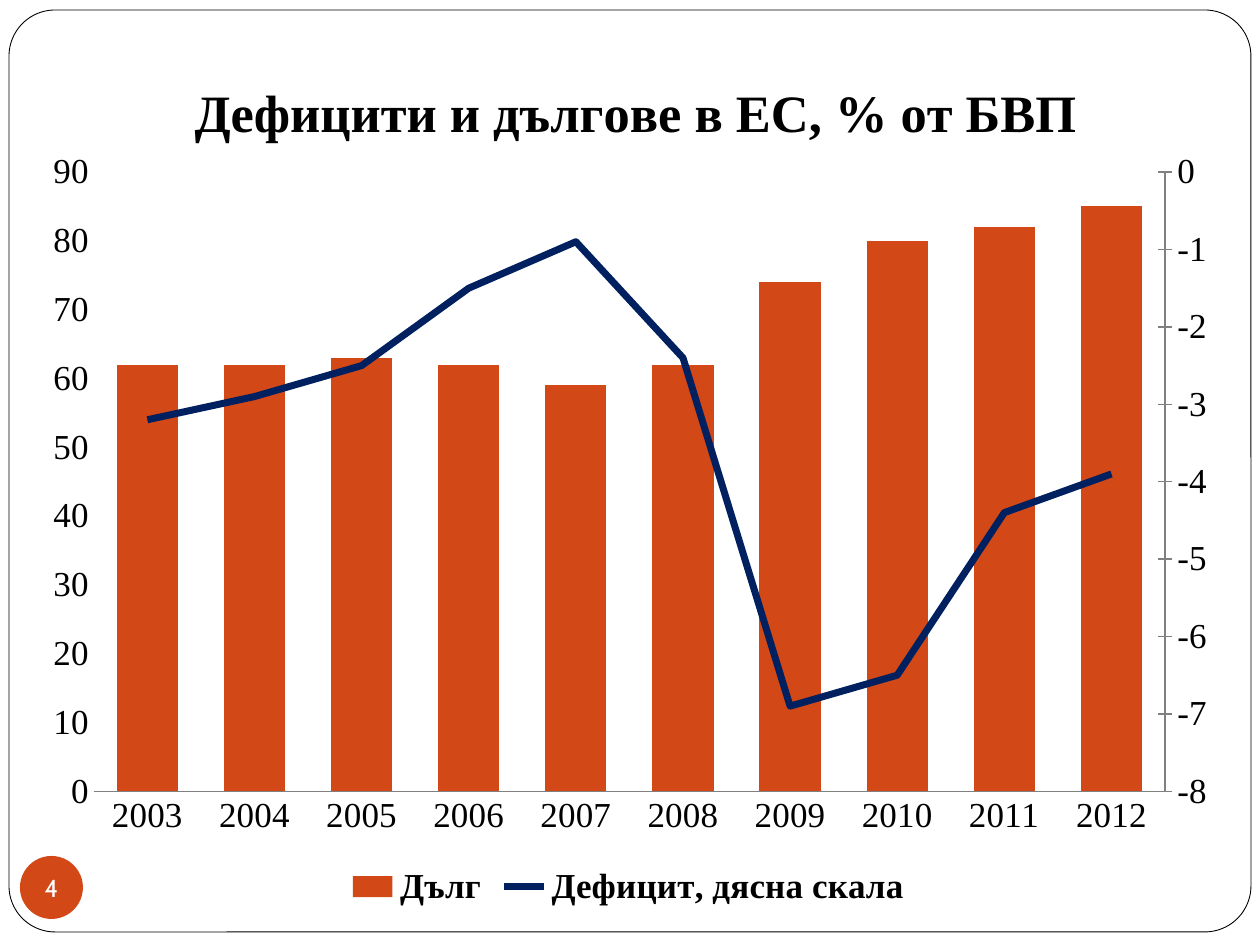
from pptx import Presentation
from pptx.chart.axis import ValueAxis
from pptx.chart.data import CategoryChartData
from pptx.dml.color import RGBColor
from pptx.enum.chart import XL_CHART_TYPE, XL_LEGEND_POSITION, XL_MARKER_STYLE, XL_TICK_MARK
from pptx.enum.shapes import MSO_SHAPE
from pptx.enum.text import MSO_ANCHOR, PP_ALIGN
from pptx.oxml import parse_xml
from pptx.oxml.ns import nsdecls
from pptx.util import Pt

COLUMNS = XL_CHART_TYPE.COLUMN_CLUSTERED
BOTTOM = XL_LEGEND_POSITION.BOTTOM
NO_MARKER = XL_MARKER_STYLE.NONE
NO_TICK, CROSS_TICK = XL_TICK_MARK.NONE, XL_TICK_MARK.CROSS
ROUNDED, OVAL = MSO_SHAPE.ROUNDED_RECTANGLE, MSO_SHAPE.OVAL
MIDDLE, CENTER = MSO_ANCHOR.MIDDLE, PP_ALIGN.CENTER

BLACK, WHITE, GREY, ORANGE, NAVY = "000000", "FFFFFF", "808080", "D34817", "002060"
SERIF, SANS = "Times New Roman", "Cabin"
PX_PER_INCH = 126

YEARS = [str(year) for year in range(2003, 2013)]
DEBT = [62, 62, 63, 62, 59, 62, 74, 80, 82, 85]
DEFICIT = [-3.2, -2.9, -2.5, -1.5, -0.9, -2.4, -6.9, -6.5, -4.4, -3.9]

LINE_PLOT = """<c:lineChart %s><c:grouping val="standard"/><c:varyColors val="0"/>
<c:marker val="1"/><c:axId val="5001"/><c:axId val="5002"/></c:lineChart>"""
HIDDEN_YEARS = """<c:catAx %s><c:axId val="5001"/><c:scaling><c:orientation val="minMax"/></c:scaling>
<c:delete val="1"/><c:axPos val="b"/><c:crossAx val="5002"/><c:crosses val="autoZero"/></c:catAx>"""
RIGHT_SCALE = """<c:valAx %s><c:axId val="5002"/><c:scaling><c:orientation val="minMax"/></c:scaling>
<c:delete val="0"/><c:axPos val="r"/><c:crossAx val="5001"/><c:crosses val="max"/></c:valAx>"""


def px(length):
    return round(length * 914400 / PX_PER_INCH)


def color(hex_code):
    return RGBColor.from_string(hex_code)


def style_font(font, size, hex_code=BLACK, face=SERIF, bold=False):
    font.size, font.name, font.bold = Pt(size), face, bold
    font.color.rgb = color(hex_code)


def write_text(frame, text, **style):
    paragraph = frame.paragraphs[0]
    paragraph.alignment = CENTER
    run = paragraph.add_run()
    run.text = text
    style_font(run.font, **style)


def chart_xml(template):
    return parse_xml(template % nsdecls("c"))


def set_layout(parent, index, target="", **fractions):
    for old in parent.xpath("./c:layout"):
        parent.remove(old)
    names = [name + "Mode" for name in "xy"]
    settings = [(name, "edge") for name in names] + list(fractions.items())
    inner = "".join(f'<c:{name} val="{value}"/>' for name, value in settings)
    parent.insert(index, chart_xml(
        f"<c:layout %s><c:manualLayout>{target}{inner}</c:manualLayout></c:layout>"))


def style_axis(axis, tick, line=GREY):
    axis.has_major_gridlines = False
    axis.major_tick_mark, axis.minor_tick_mark = tick, NO_TICK
    style_font(axis.tick_labels.font, 20)
    if line:
        axis.format.line.color.rgb = color(line)
        axis.format.line.width = Pt(0.75)
    else:
        axis.format.line.fill.background()


def style_scale(axis, low, high, step, tick, line=GREY):
    style_axis(axis, tick, line)
    axis.minimum_scale, axis.maximum_scale, axis.major_unit = low, high, step
    axis.tick_labels.number_format = "#,##0"
    axis.tick_labels.number_format_is_linked = False


def move_to_right_scale(chart):
    """Turn the second series into a line on its own axis and return that axis."""
    plot_area = chart.element.xpath(".//c:plotArea")[0]
    bars = plot_area.xpath("./c:barChart")[0]
    series = bars.xpath("./c:ser")[1]
    for flag in series.xpath("./c:invertIfNegative"):
        series.remove(flag)
    line_plot = chart_xml(LINE_PLOT)
    line_plot.insert(2, series)
    bars.addnext(line_plot)
    scale = chart_xml(RIGHT_SCALE)
    left_scale = plot_area.xpath("./c:valAx")[0]
    left_scale.addnext(scale)
    scale.addnext(chart_xml(HIDDEN_YEARS))
    return ValueAxis(scale)


class Deck:
    """Holds the style and the current slide, and adds elements to it."""

    def __init__(self, width, height):
        self.presentation = Presentation()
        self.presentation.slide_width = px(width)
        self.presentation.slide_height = px(height)
        self.slide = self.presentation.slides.add_slide(self.presentation.slide_layouts[6])

    def shape(self, preset, box, fill, line=None):
        shape = self.slide.shapes.add_shape(preset, *map(px, box))
        shape.shadow.inherit = False
        shape.fill.solid()
        shape.fill.fore_color.rgb = color(fill)
        if line:
            shape.line.color.rgb = color(line)
            shape.line.width = Pt(0.5)
        else:
            shape.line.fill.background()
        return shape

    def badge(self, text, box):
        frame = self.shape(OVAL, box, ORANGE).text_frame
        frame.margin_left = frame.margin_right = frame.margin_top = frame.margin_bottom = 0
        frame.word_wrap, frame.vertical_anchor = False, MIDDLE
        write_text(frame, text, size=14, hex_code=WHITE, face=SANS)

    def combined_chart(self, title, box, categories, columns, line):
        data = CategoryChartData()
        data.categories = categories
        for name, values in (columns, line):
            data.add_series(name, values)
        chart = self.slide.shapes.add_chart(COLUMNS, *map(px, box), data).chart
        style_font(chart.font, 10)
        write_text(chart.chart_title.text_frame, title, size=30, bold=True)
        chart.has_legend = True
        chart.legend.position, chart.legend.include_in_layout = BOTTOM, False
        style_font(chart.legend.font, 20, bold=True)
        style_axis(chart.category_axis, NO_TICK)
        style_scale(chart.value_axis, 0, 90, 10, NO_TICK, line=None)
        style_scale(move_to_right_scale(chart), -8, 0, 1, CROSS_TICK)

        column_plot, line_plot = chart.plots
        column_plot.gap_width, column_plot.overlap = 75, -25
        column_plot.vary_by_categories = False
        fill = column_plot.series[0].format.fill
        fill.solid()
        fill.fore_color.rgb = color(ORANGE)
        trend = line_plot.series[0]
        trend.smooth, trend.marker.style = False, NO_MARKER
        trend.format.line.color.rgb = color(NAVY)
        trend.format.line.width = Pt(4)

        root = chart.element
        set_layout(root.xpath(".//c:plotArea")[0], 0, '<c:layoutTarget val="inner"/>',
                   x=0.054, y=0.152, w=0.892, h=0.707)
        set_layout(root.xpath("./c:chart/c:title")[0], 1, x=0.13, y=0.035)
        set_layout(root.xpath(".//c:legend")[0], 1, x=0.26, y=0.94)

    def save(self):
        self.presentation.save("out.pptx")


def main():
    deck = Deck(1260, 945)
    border = deck.shape(ROUNDED, (9, 10, 1242, 922), WHITE, BLACK)
    border.adjustments[0] = 0.05
    deck.combined_chart("Дефицити и дългове в ЕС, % от БВП", (29, 39, 1201, 876), YEARS,
                        ("Дълг", DEBT), ("Дефицит, дясна скала", DEFICIT))
    deck.badge("4", (20, 856, 63, 63))
    deck.save()


if __name__ == "__main__":
    main()
